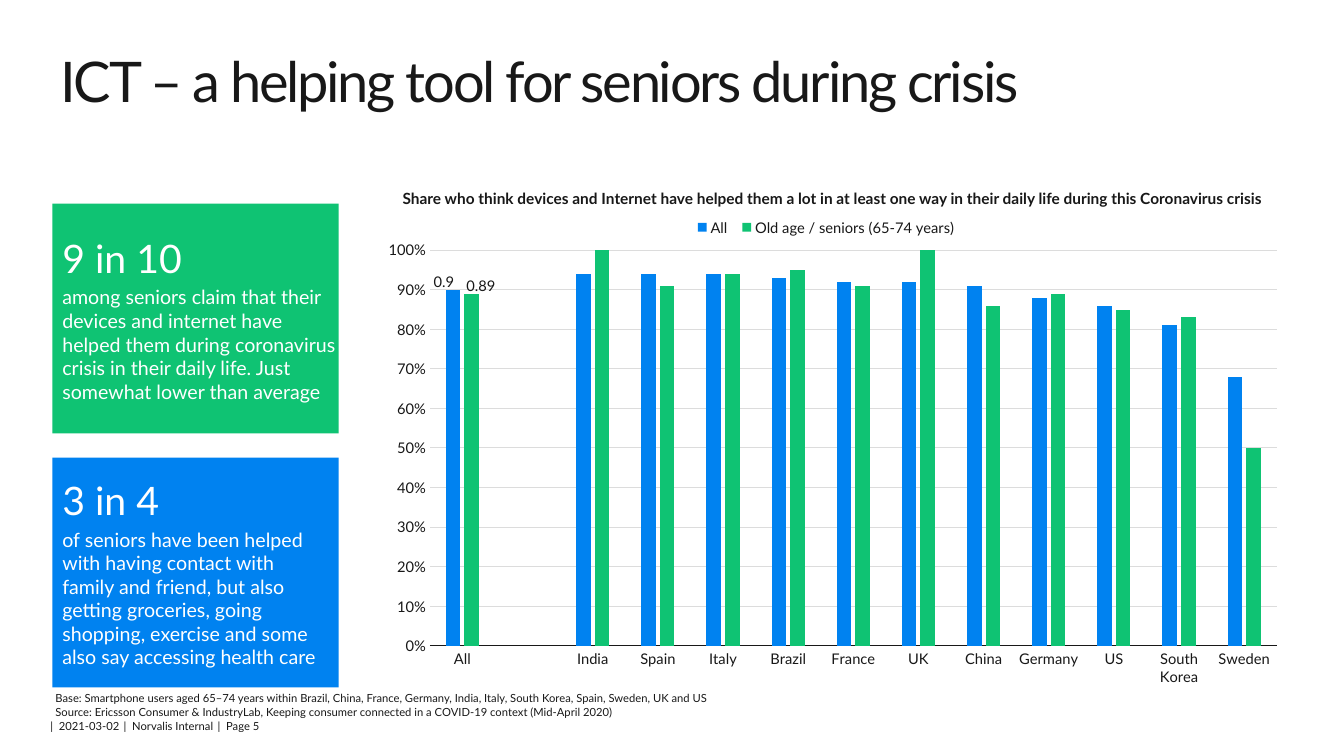
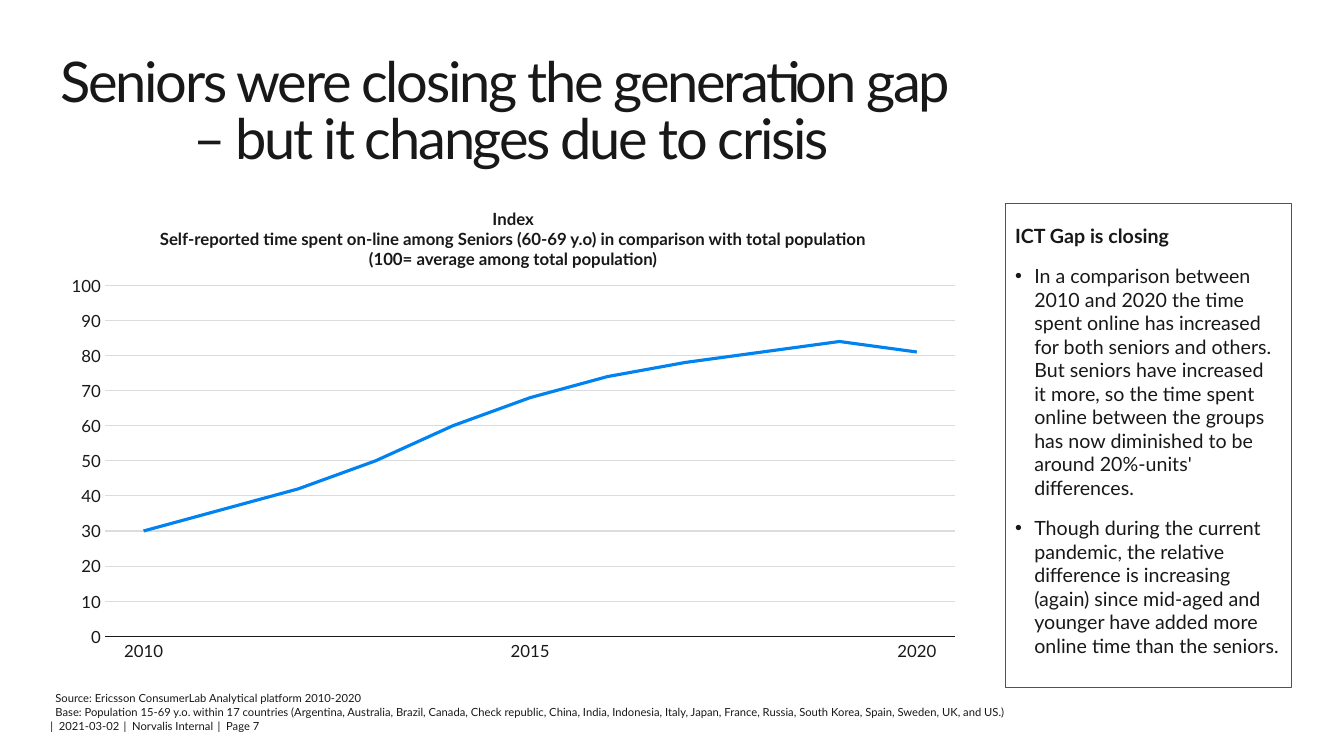
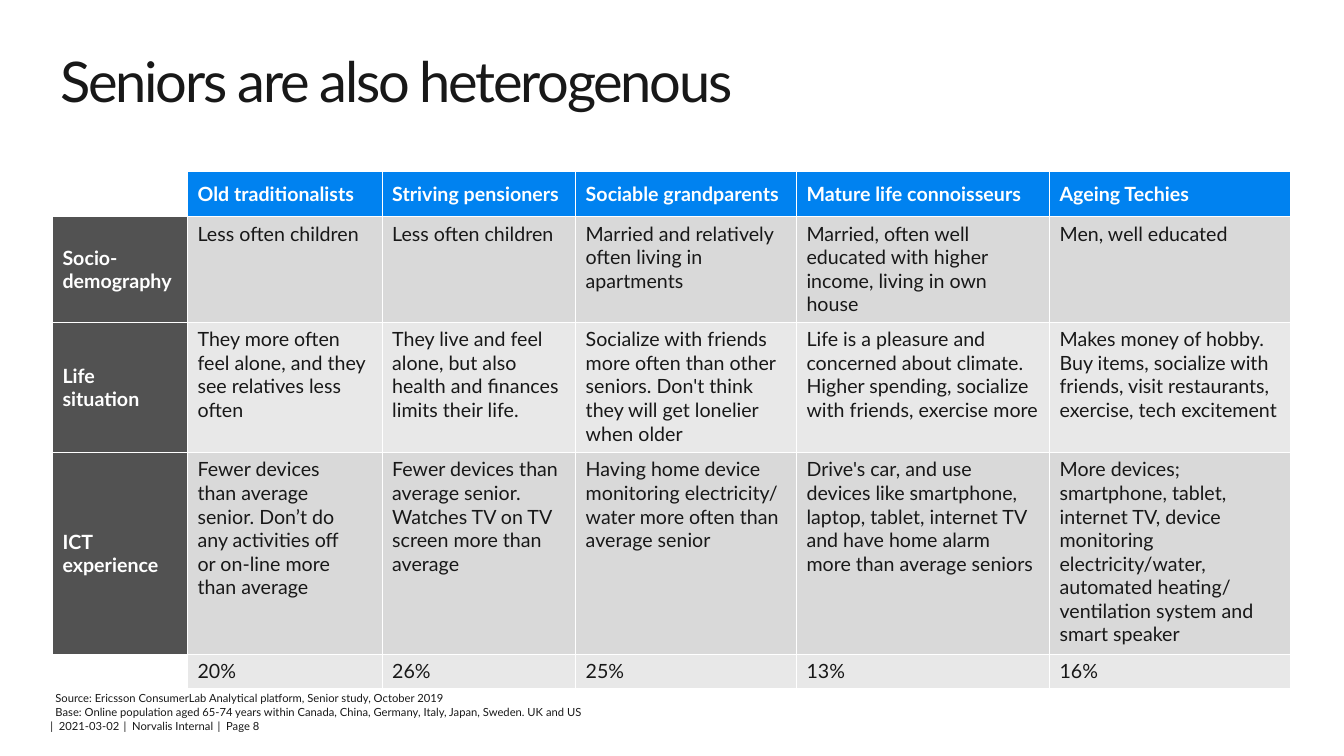
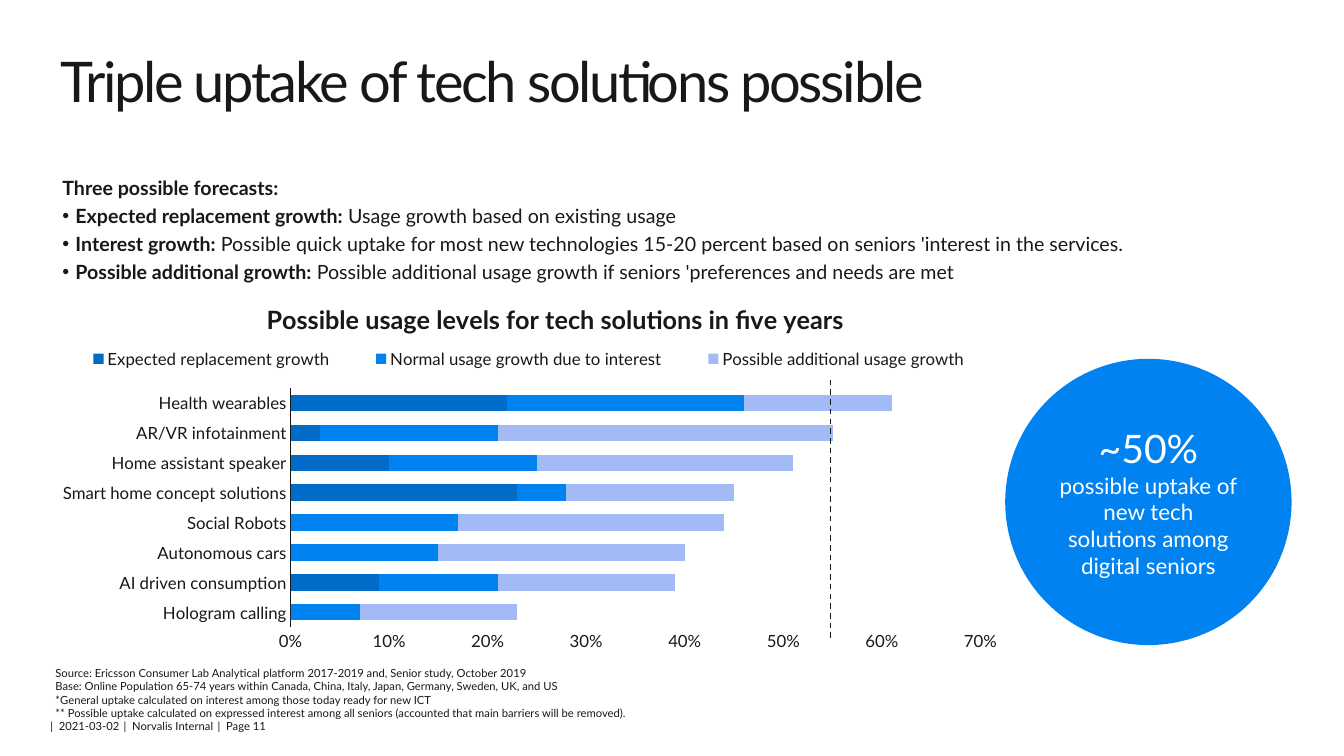
from lxml import etree
from pptx import Presentation
from pptx.chart.data import CategoryChartData
from pptx.dml.color import RGBColor
from pptx.enum.chart import (XL_CHART_TYPE, XL_LABEL_POSITION,
                             XL_LEGEND_POSITION, XL_TICK_MARK)
from pptx.enum.dml import MSO_LINE
from pptx.enum.shapes import MSO_CONNECTOR, MSO_SHAPE
from pptx.enum.text import MSO_ANCHOR, PP_ALIGN
from pptx.oxml.ns import qn
from pptx.util import Inches, Pt

FONT = "Lato"
INK, WHITE = "181818", "FFFFFF"
BLUE, GREEN, DEEP_BLUE, PALE_BLUE = "0082F0", "0FC373", "006CC7", "A2BBF5"
GRID, DARK_GREY, MID_GREY, LIGHT_GREY = "DCDCDC", "525252", "D9D9D9", "E8E8E8"

CENTER, LEFT = PP_ALIGN.CENTER, PP_ALIGN.LEFT
MIDDLE, TOP = MSO_ANCHOR.MIDDLE, MSO_ANCHOR.TOP
RECT, OVAL = MSO_SHAPE.RECTANGLE, MSO_SHAPE.OVAL
COLUMNS, LINE = XL_CHART_TYPE.COLUMN_CLUSTERED, XL_CHART_TYPE.LINE
STACKED_BARS = XL_CHART_TYPE.BAR_STACKED
NO_TICK, LEGEND_TOP = XL_TICK_MARK.NONE, XL_LEGEND_POSITION.TOP
OUTSIDE_END = XL_LABEL_POSITION.OUTSIDE_END

MARGIN = 0.52
SIDE_LEFT, SIDE_WIDTH = 9.97, 2.84
FULL_WIDTH = 12.28
MAIN_WIDTH = 9.14


# Shared helpers
def rgb(value):
    return RGBColor.from_string(value)


def inches(box):
    return [Inches(v) for v in box]


def style_run(run, size, color=INK, bold=False):
    run.font.name = FONT
    run.font.size = Pt(size)
    run.font.bold = bold
    run.font.color.rgb = rgb(color)


def set_tracking(run, points):
    run.font._element.set("spc", str(round(points * 100)))


def write(frame, lines, size, color=INK, bold=False, align=LEFT, space=0):
    """Fill a text frame, one paragraph per line; the first has no gap above."""
    frame.text = "\n".join(lines)
    for i, paragraph in enumerate(frame.paragraphs):
        paragraph.alignment = align
        paragraph.space_before = Pt(space if i else 0)
        for run in paragraph.runs:
            style_run(run, size, color, bold)
        for line_break in paragraph._p.findall(qn("a:br")):
            etree.SubElement(line_break, qn("a:rPr"), sz=str(size * 100))
    return frame.paragraphs


def set_frame(frame, insets=(0.1, 0.05, 0.1, 0.05), anchor=TOP):
    frame.word_wrap = True
    frame.vertical_anchor = anchor
    (frame.margin_left, frame.margin_top,
     frame.margin_right, frame.margin_bottom) = inches(insets)
    return frame


def add_text(slide, box, **frame_options):
    return set_frame(slide.shapes.add_textbox(*inches(box)).text_frame, **frame_options)


def add_panel(slide, kind, box, fill, outline=None, **frame_options):
    panel = slide.shapes.add_shape(kind, *inches(box))
    panel.shadow.inherit = False
    panel.fill.solid()
    panel.fill.fore_color.rgb = rgb(fill)
    if outline:
        panel.line.color.rgb = rgb(outline)
        panel.line.width = Pt(0.75)
    else:
        panel.line.fill.background()
    return set_frame(panel.text_frame, **frame_options)


def set_indent(paragraph, left, first=0):
    properties = paragraph._p.get_or_add_pPr()
    properties.set("marL", str(Inches(left)))
    properties.set("indent", str(Inches(first)))
    return properties


def add_bullet(paragraph, hang):
    properties = set_indent(paragraph, hang, -hang)
    color = etree.SubElement(properties, qn("a:buClr"))
    etree.SubElement(color, qn("a:srgbClr"), val=INK)
    etree.SubElement(properties, qn("a:buFont"), typeface="Arial")
    etree.SubElement(properties, qn("a:buChar"), char="•")


# Slide frame: title, notes and footer
def add_title(slide, lines, width, second_indent):
    frame = add_text(slide, (MARGIN, 0.52, width, 1.18), insets=(0.08, 0.04, 0, 0))
    for i, paragraph in enumerate(write(frame, lines, 40)):
        paragraph.line_spacing = 0.85
        set_indent(paragraph, second_indent if i else 0)
        for run in paragraph.runs:
            set_tracking(run, -1.6)


def add_footer(slide, page):
    frame = add_text(slide, (0.5, 7.14, 2.6, 0.13), insets=(0, 0, 0, 0))
    line = frame.paragraphs[0]
    separator = "| "
    for entry in ("2021-03-02", "Norvalis Internal", f"Page {page}"):
        for text, tracking in ((separator, 1), (entry, 0)):
            run = line.add_run()
            run.text = text
            style_run(run, 8)
            set_tracking(run, tracking)
        separator = " | "


def new_slide(deck, title, page, notes, notes_top=6.82, title_width=MAIN_WIDTH,
              second_indent=0):
    slide = deck.slides.add_slide(deck.slide_layouts[6])
    add_title(slide, title, title_width, second_indent)
    frame = add_text(slide, (0.47, notes_top, 9.94, 0.35), insets=(0.08, 0.04, 0.08, 0.04))
    write(frame, notes, 8)
    add_footer(slide, page)
    return slide


# Charts
def manual_layout(values, edge=True, inner=False):
    """Layout by fractions of the chart; without edge, values are offsets."""
    layout = etree.Element(qn("c:layout"))
    manual = etree.SubElement(layout, qn("c:manualLayout"))
    if inner:
        etree.SubElement(manual, qn("c:layoutTarget"), val="inner")
    if edge:
        for mode in ("xMode", "yMode"):
            etree.SubElement(manual, qn(f"c:{mode}"), val="edge")
    for key, value in zip("xywh", values):
        etree.SubElement(manual, qn(f"c:{key}"), val=str(value))
    return layout


def set_layout(element, values, **options):
    for old in element.findall(qn("c:layout")):
        element.remove(old)
    leading = [qn(f"c:{tag}") for tag in ("idx", "tx", "legendPos", "legendEntry")]
    before = [child for child in element if child.tag in leading]
    element.insert(len(before), manual_layout(values, **options))


def label_point(series, index, offset):
    """Show one value above its column, shifted by fractions of the chart."""
    series.data_labels.show_value = False
    series.points[index].data_label.position = OUTSIDE_END
    for label in series._element.iter(qn("c:dLbl")):
        set_layout(label, offset, edge=False)


def add_chart(slide, kind, box, categories, series, size, plot_box, top, step,
              number_format="0%", grid=True, legend_box=None):
    data = CategoryChartData()
    data.categories = categories
    for name, values, _ in series:
        data.add_series(name, values)
    chart = slide.shapes.add_chart(kind, *inches(box), data).chart
    chart.font.name = FONT
    chart.font.size = Pt(size)
    chart.font.color.rgb = rgb(INK)
    chart.has_title = False
    set_layout(chart._chartSpace.chart.plotArea, plot_box, inner=True)

    category_axis, value_axis = chart.category_axis, chart.value_axis
    for axis in (category_axis, value_axis):
        axis.major_tick_mark = axis.minor_tick_mark = NO_TICK
        axis.has_major_gridlines = False
    category_axis.format.line.color.rgb = rgb(INK)
    category_axis.format.line.width = Pt(0.75)
    value_axis.format.line.fill.background()
    value_axis.minimum_scale, value_axis.maximum_scale = 0, top
    value_axis.major_unit = step
    value_axis.tick_labels.number_format = number_format
    value_axis.tick_labels.number_format_is_linked = False
    if grid:
        value_axis.has_major_gridlines = True
        value_axis.major_gridlines.format.line.color.rgb = rgb(GRID)
        value_axis.major_gridlines.format.line.width = Pt(0.75)

    chart.has_legend = legend_box is not None
    if legend_box:
        chart.legend.position = LEGEND_TOP
        chart.legend.include_in_layout = False
        chart.legend.font.name = FONT
        chart.legend.font.size = Pt(size)
        chart.legend.font.color.rgb = rgb(INK)
        set_layout(chart.legend._element, legend_box)

    plot = chart.plots[0]
    plot.vary_by_categories = False
    for drawn, (_, _, color) in zip(plot.series, series):
        if kind == LINE:
            drawn.smooth = False
            drawn.format.line.color.rgb = rgb(color)
            drawn.format.line.width = Pt(2.25)
        else:
            drawn.format.fill.solid()
            drawn.format.fill.fore_color.rgb = rgb(color)
    return chart


# Slide: help during crisis
def add_fact_card(slide, box, fill, figure, claim):
    frame = add_panel(slide, RECT, box, fill, insets=(0.1, 0.1, 0, 0.1), anchor=MIDDLE)
    headline = write(frame, [figure, claim], 14, WHITE, space=3)[0]
    style_run(headline.runs[0], 28, WHITE)


def build_crisis_help(deck):
    slide = new_slide(
        deck, ["ICT – a helping tool for seniors during crisis"], 5,
        ["Base: Smartphone users aged 65–74 years within Brazil, China, France, Germany, "
         "India, Italy, South Korea, Spain, Sweden, UK and US",
         "Source: Ericsson Consumer & IndustryLab, Keeping consumer connected in a "
         "COVID-19 context (Mid-April 2020)"],
        title_width=10.46)
    cards = [
        (GREEN, "9 in 10",
         "among seniors claim that their devices and internet have helped them during "
         "coronavirus crisis in their daily life. Just somewhat lower than average"),
        (BLUE, "3 in 4",
         "of seniors have been helped with having contact with\vfamily and friend, but "
         "also getting groceries, going shopping, exercise and some also say accessing "
         "health care"),
    ]
    for i, card in enumerate(cards):
        add_fact_card(slide, (MARGIN, 2.02 + i * 2.52, SIDE_WIDTH, 2.28), *card)

    chart = add_chart(
        slide, COLUMNS, (3.67, 1.72, MAIN_WIDTH, 5.22),
        ["All", "", "India", "Spain", "Italy", "Brazil", "France", "UK", "China",
         "Germany", "US", "South Korea", "Sweden"],
        [("All", [0.9, None, 0.94, 0.94, 0.94, 0.93, 0.92, 0.92, 0.91, 0.88, 0.86,
                  0.81, 0.68], BLUE),
         ("Old age / seniors (65-74 years)",
          [0.89, None, 1, 0.91, 0.94, 0.95, 0.91, 1, 0.86, 0.89, 0.85, 0.83, 0.5], GREEN)],
        10.5, (0.065, 0.146, 0.919, 0.752), top=1, step=0.1,
        legend_box=(0.345, 0.075, 0.3, 0.055))
    plot = chart.plots[0]
    plot.gap_width, plot.overlap = 219, -27
    for series, offset in zip(plot.series, ((-0.01, 0.01), (0.01, 0.01))):
        label_point(series, 0, offset)

    heading = add_text(slide, (3.69, 1.83, MAIN_WIDTH, 0.29))
    write(heading, ["Share who think devices and Internet have helped them a lot in at "
                    "least one way in their daily life during this Coronavirus crisis"],
          11, bold=True, align=CENTER)


# Slide: generation gap
def build_generation_gap(deck):
    slide = new_slide(
        deck, ["Seniors were closing the generation gap", "– but it changes due to crisis"], 7,
        ["Source: Ericsson ConsumerLab Analytical platform 2010-2020",
         "Base: Population 15-69 y.o. within 17 countries (Argentina, Australia, Brazil, "
         "Canada, Check republic, China, India, Indonesia, Italy, Japan, France, Russia, "
         "South Korea, Spain, Sweden, UK, and US.)"],
        second_indent=1.32)
    add_chart(
        slide, LINE, (MARGIN, 2.66, MAIN_WIDTH, 3.98),
        ["2010", "", "", "", "", "2015", "", "", "", "", "2020"],
        [("Series 1", [30, 36, 42, 50, 60, 68, 74, 78, 81, 84, 81], BLUE)],
        12, (0.057, 0.043, 0.923, 0.875), top=100, step=10, number_format="0")

    heading = add_text(slide, (MARGIN, 2.02, MAIN_WIDTH, 0.64))
    write(heading, ["Index",
                    "Self-reported time spent on-line among Seniors (60-69 y.o) in "
                    "comparison with total population",
                    "(100= average among total population)"],
          12, bold=True, align=CENTER)

    comments = add_panel(slide, RECT, (SIDE_LEFT, 2.02, SIDE_WIDTH, 4.8), WHITE, DARK_GREY,
                         insets=(0.1, 0.2, 0.1, 0.05))
    topic, *points = write(comments, [
        "ICT Gap is closing",
        "In a comparison between 2010 and 2020 the time spent online has increased for "
        "both seniors and others. But seniors have increased\vit more, so the time spent "
        "online between the groups has now diminished to be around 20%-units' differences.",
        "Though during the current pandemic, the relative difference is increasing (again) "
        "since mid-aged and younger have added more online time than the seniors."],
        14, space=12)
    topic.runs[0].font.bold = True
    for point in points:
        add_bullet(point, 0.19)


# Slide: senior segments
def fill_cell(cell, text, fill, color, bold, anchor):
    cell.fill.solid()
    cell.fill.fore_color.rgb = rgb(fill)
    cell.vertical_anchor = anchor
    if text:
        write(cell.text_frame, text.split("\n"), 14, color, bold)
    else:
        etree.SubElement(cell.text_frame.paragraphs[0]._p, qn("a:endParaRPr"), sz="1400")
    properties = cell._tc.get_or_add_tcPr()
    for i, side in enumerate(("lnL", "lnR", "lnT", "lnB")):
        border = etree.Element(qn(f"a:{side}"), w=str(Pt(1)))
        paint = etree.SubElement(border, qn("a:solidFill"))
        etree.SubElement(paint, qn("a:srgbClr"), val=WHITE)
        properties.insert(i, border)


def add_segment_table(slide, box, rows, widths, heights):
    table = slide.shapes.add_table(len(rows), len(widths), *inches(box)).table
    table.first_row = table.horz_banding = False
    for column, width in zip(table.columns, widths):
        column.width = Inches(width)
    for row, height in zip(table.rows, heights):
        row.height = Inches(height)
    last = len(rows) - 1
    for r, row in enumerate(rows):
        for c, text in enumerate(row):
            heading = r == 0 or c == 0
            if not text:
                fill = WHITE
            elif heading:
                fill = BLUE if r == 0 else DARK_GREY
            else:
                fill = MID_GREY if r % 2 else LIGHT_GREY
            fill_cell(table.cell(r, c), text, fill, WHITE if heading else INK, heading,
                      MIDDLE if heading or r == last else TOP)


def build_segments(deck):
    slide = new_slide(
        deck, ["Seniors are also heterogenous"], 8,
        ["Source: Ericsson ConsumerLab Analytical platform, Senior study, October 2019",
         "Base: Online population aged 65-74 years within Canada, China, Germany, Italy, "
         "Japan, Sweden. UK and US"])
    rows = [
        ["", "Old traditionalists", "Striving pensioners", "Sociable grandparents",
         "Mature life connoisseurs", "Ageing Techies"],
        ["Socio-\ndemography", "Less often children", "Less often children",
         "Married and relatively often living in apartments",
         "Married, often well educated with higher income, living in own house",
         "Men, well educated"],
        ["Life\nsituation",
         "They more often feel alone, and they see relatives less often",
         "They live and feel alone, but also health and finances limits their life.",
         "Socialize with friends more often than other seniors. Don't think they will get "
         "lonelier when older",
         "Life is a pleasure and concerned about climate. Higher spending, socialize with "
         "friends, exercise more",
         "Makes money of hobby. Buy items, socialize with friends, visit restaurants, "
         "exercise, tech excitement"],
        ["ICT\nexperience",
         "Fewer devices\vthan average\vsenior. Don’t do\vany activities off\v"
         "or on-line more\vthan average",
         "Fewer devices than average senior. Watches TV on TV screen more than average",
         "Having home device monitoring electricity/ water more often than average senior",
         "Drive's car, and use devices like smartphone, laptop, tablet, internet TV and "
         "have home alarm more than average seniors",
         "More devices; smartphone, tablet, internet TV, device monitoring "
         "electricity/water, automated heating/ ventilation system and smart speaker"],
        ["", "20%", "26%", "25%", "13%", "16%"],
    ]
    add_segment_table(slide, (MARGIN, 1.7, FULL_WIDTH, 5.12), rows,
                      (1.34, 1.93, 1.92, 2.19, 2.51, 2.39), (0.45, 1.05, 1.29, 2, 0.34))


# Slide: uptake forecast
def add_forecasts(slide, box, heading, forecasts):
    lines = [heading] + [name for name, _ in forecasts]
    _, *points = write(add_text(slide, box), lines, 14, bold=True, space=3)
    for point, (_, meaning) in zip(points, forecasts):
        add_bullet(point, 0.13)
        run = point.add_run()
        run.text = " " + meaning
        style_run(run, 14)


def add_marker_line(slide, x, bottom, top):
    marker = slide.shapes.add_connector(MSO_CONNECTOR.STRAIGHT,
                                        *inches((x, bottom, x, top)))
    marker.line.color.rgb = rgb(INK)
    marker.line.width = Pt(1)
    marker.line.dash_style = MSO_LINE.DASH
    etree.SubElement(marker._element.spPr, qn("a:effectLst"))


def build_uptake(deck):
    slide = new_slide(
        deck, ["Triple uptake of tech solutions possible"], 11,
        ["Source: Ericsson Consumer Lab Analytical platform 2017-2019 and, Senior study, "
         "October 2019",
         "Base: Online Population 65-74 years within Canada, China, Italy, Japan, Germany, "
         "Sweden, UK, and US",
         "*General uptake calculated on interest among those today ready for new ICT",
         "** Possible uptake calculated on expressed interest among all seniors (accounted "
         "that main barriers will be removed)."],
        notes_top=6.57)
    add_forecasts(slide, (MARGIN, 1.7, FULL_WIDTH, 1.27), "Three possible forecasts:", [
        ("Expected replacement growth:", "Usage growth based on existing usage"),
        ("Interest growth:", "Possible quick uptake for most new technologies 15-20 percent "
                             "based on seniors 'interest in the services."),
        ("Possible additional growth:", "Possible additional usage growth if seniors "
                                        "'preferences and needs are met")])

    chart = add_chart(
        slide, STACKED_BARS, (MARGIN, 2.91, 9.45, 3.71),
        ["Hologram calling", "AI driven consumption", "Autonomous cars", "Social Robots",
         "Smart home concept solutions", "Home assistant speaker", "AR/VR infotainment",
         "Health wearables"],
        [("Expected replacement growth",
          [0, 0.09, 0, 0, 0.23, 0.1, 0.03, 0.22], DEEP_BLUE),
         ("Normal usage growth due to interest",
          [0.07, 0.12, 0.15, 0.17, 0.05, 0.15, 0.18, 0.24], BLUE),
         ("Possible additional usage growth",
          [0.16, 0.18, 0.25, 0.27, 0.17, 0.26, 0.34, 0.15], PALE_BLUE)],
        12, (0.25, 0.254, 0.724, 0.639), top=0.7, step=0.1, grid=False,
        legend_box=(0, 0.14, 1, 0.07))
    chart.plots[0].gap_width, chart.plots[0].overlap = 81, 100
    write(chart.chart_title.text_frame,
          ["Possible usage levels for tech solutions in five years"], 18, bold=True)
    set_layout(chart.chart_title._element, (0.22, 0.01))
    add_marker_line(slide, 8.24, 6.33, 3.75)

    bubble = add_panel(slide, OVAL, (SIDE_LEFT, 3.56, SIDE_WIDTH, SIDE_WIDTH), BLUE,
                       anchor=MIDDLE)
    figure = write(bubble, ["~50%", "possible uptake of new tech solutions among digital "
                                    "seniors"], 16, WHITE, align=CENTER)[0]
    style_run(figure.runs[0], 28, WHITE)


def main():
    deck = Presentation()
    deck.slide_width, deck.slide_height = Inches(13.33), Inches(7.5)
    build_crisis_help(deck)
    build_generation_gap(deck)
    build_segments(deck)
    build_uptake(deck)
    deck.save("out.pptx")


if __name__ == "__main__":
    main()
